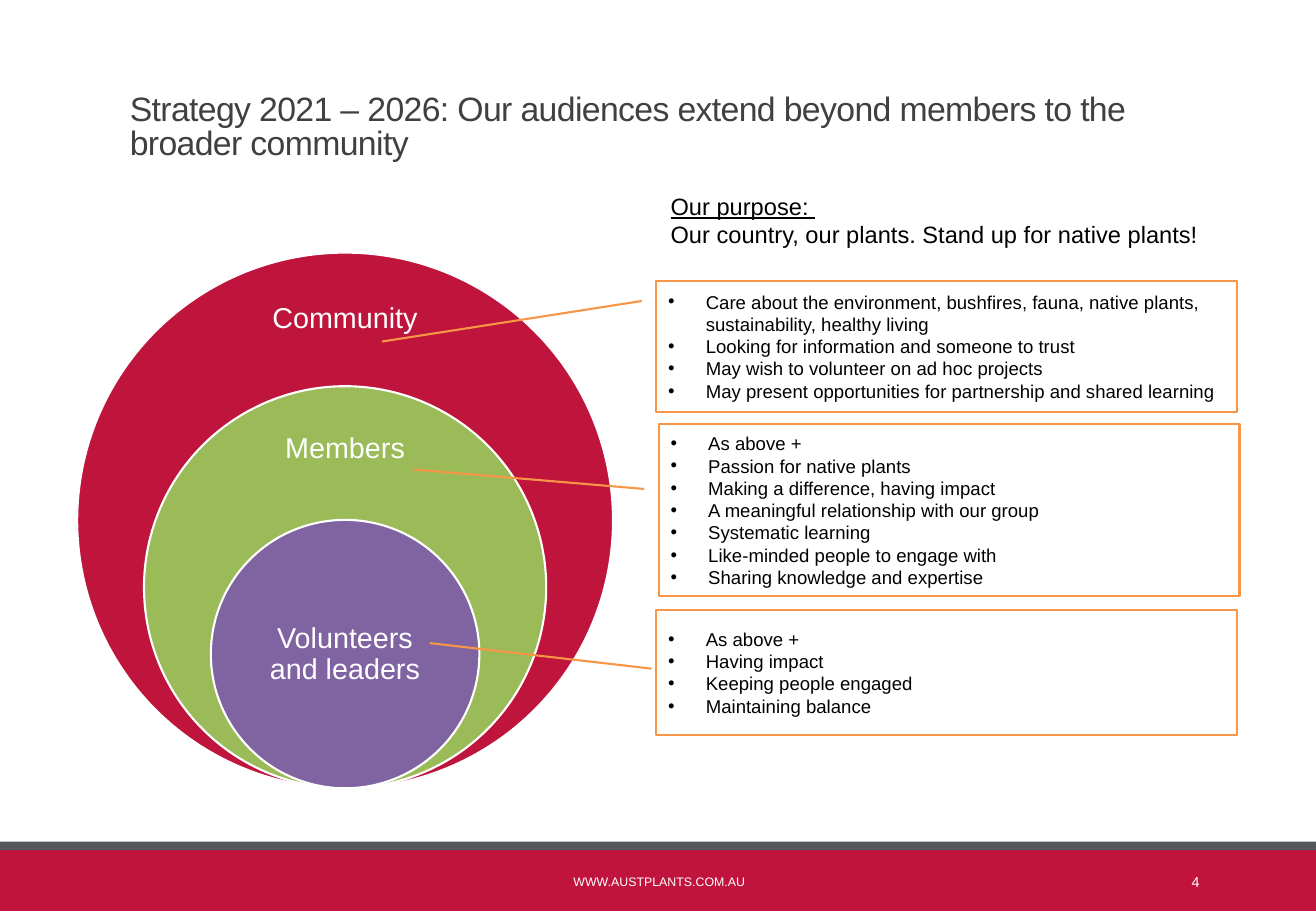
from lxml.etree import SubElement
from pptx import Presentation
from pptx.dml.color import RGBColor
from pptx.enum.shapes import MSO_SHAPE
from pptx.enum.text import MSO_ANCHOR, PP_ALIGN
from pptx.oxml.ns import qn
from pptx.util import Inches, Pt

FONT = "Arial"
COLORS = {
    "band": "C0143C", "stripe": "54585B", "title": "404040",
    "community": "BF143B", "members": "9BBB59", "volunteers": "8064A2",
    "callout": "F79646", "white": "FFFFFF", "black": "000000",
}
TITLE = "Strategy 2021 – 2026: Our audiences extend beyond members to the broader community"
PURPOSE = ["Our purpose: ", "Our country, our plants. Stand up for native plants!"]
WEBSITE, PAGE = "WWW.AUSTPLANTS.COM.AU", "4"

# name, colour, diameter, label top, label height
AUDIENCES = [
    ("Community", "community", 4.41, 2.3, 0.66),
    ("Members", "members", 3.31, 3.39, 0.62),
    ("Volunteers and leaders", "volunteers", 2.21, 4.84, 1.1),
]
CIRCLE_CENTER, CIRCLE_BOTTOM, LABEL_WIDTH = 2.84, 6.49, 1.56

# left, top, height, leader line (y1, x1, y2, x2), points
CALLOUTS = [
    (5.4, 2.31, 1.08, (0.156, -0.025, 0.465, -0.472), [
        "Care about the environment, bushfires, fauna, native plants, sustainability, healthy living",
        "Looking for information and someone to trust",
        "May wish to volunteer on ad hoc projects",
        "May present opportunities for partnership and shared learning",
    ]),
    (5.42, 3.49, 1.42, (0.377, -0.025, 0.264, -0.423), [
        "As above +",
        "Passion for native plants",
        "Making a difference, having impact",
        "A meaningful relationship with our group",
        "Systematic learning",
        "Like-minded people to engage with",
        "Sharing knowledge and expertise",
    ]),
    (5.4, 5.02, 1.03, (0.471, -0.008, 0.267, -0.39), [
        "As above +",
        "Having impact",
        "Keeping people engaged",
        "Maintaining balance",
    ]),
]
CALLOUT_WIDTH = 4.78


def rgb(name):
    return RGBColor.from_string(COLORS[name])


def add_figure(slide, kind, box, fill, line=None):
    figure = slide.shapes.add_shape(kind, *map(Inches, box))
    figure.shadow.inherit = False
    figure.fill.solid()
    figure.fill.fore_color.rgb = rgb(fill)
    if line:
        figure.line.color.rgb = rgb(line)
        figure.line.width = Pt(1.25)
    else:
        figure.line.fill.background()
    return figure


def write(frame, lines, size, color, align=PP_ALIGN.LEFT, anchor=MSO_ANCHOR.MIDDLE,
          spacing=None, bullet=False):
    frame.word_wrap = True
    frame.vertical_anchor = anchor
    frame.text = "\n".join(lines)
    for paragraph in frame.paragraphs:
        paragraph.alignment = align
        if spacing:
            paragraph.line_spacing = spacing
        if bullet:
            properties = paragraph._p.get_or_add_pPr()
            properties.set("marL", str(Inches(0.31)))
            properties.set("indent", str(-Inches(0.31)))
            SubElement(properties, qn("a:buFont"), typeface=FONT)
            SubElement(properties, qn("a:buChar"), char="•")
        paragraph.font.name = FONT
        paragraph.font.size = Pt(size)
        paragraph.font.color.rgb = rgb(color)


def add_text(slide, box, lines, size, color, **style):
    frame = slide.shapes.add_textbox(*map(Inches, box)).text_frame
    write(frame, lines, size, color, **style)
    return frame


def main():
    """Build the audience strategy slide."""
    deck = Presentation()
    deck.slide_width, deck.slide_height = Inches(10.83), Inches(7.5)
    slide = deck.slides.add_slide(deck.slide_layouts[6])

    add_figure(slide, MSO_SHAPE.RECTANGLE, (0, 7, 10.83, 0.5), "band")
    add_figure(slide, MSO_SHAPE.RECTANGLE, (0, 6.93, 10.83, 0.07), "stripe")

    title = add_text(slide, (0.97, 0.31, 9.2, 1.08), [TITLE], 20, "title",
                     anchor=MSO_ANCHOR.BOTTOM, spacing=0.85)
    title.paragraphs[0].runs[0]._r.get_or_add_rPr().set("spc", "-40")

    for name, color, diameter, label_top, label_height in AUDIENCES:
        circle = (CIRCLE_CENTER - diameter / 2, CIRCLE_BOTTOM - diameter, diameter, diameter)
        add_figure(slide, MSO_SHAPE.OVAL, circle, color, "white")
        label = (CIRCLE_CENTER - LABEL_WIDTH / 2, label_top, LABEL_WIDTH, label_height)
        frame = add_text(slide, label, [name], 17, "white", align=PP_ALIGN.CENTER, spacing=0.9)
        frame.margin_left = frame.margin_right = Inches(0.13)
        frame.margin_top = frame.margin_bottom = Inches(0.13)

    purpose = add_text(slide, (5.42, 1.53, 5.06, 0.81), PURPOSE, 14, "black",
                       anchor=MSO_ANCHOR.TOP)
    purpose.paragraphs[0].font.underline = True

    for left, top, height, leader, points in CALLOUTS:
        callout = add_figure(slide, MSO_SHAPE.LINE_CALLOUT_1,
                             (left, top, CALLOUT_WIDTH, height), "white", "callout")
        for index, value in enumerate(leader):
            callout.adjustments[index] = value
        write(callout.text_frame, points, 11, "black", bullet=True)

    add_text(slide, (3.28, 7.06, 4.29, 0.4), [WEBSITE], 7.3, "white", align=PP_ALIGN.CENTER)
    add_text(slide, (8.8, 7.06, 1.17, 0.4), [PAGE], 8.5, "white", align=PP_ALIGN.RIGHT)
    deck.save("out.pptx")


if __name__ == "__main__":
    main()
